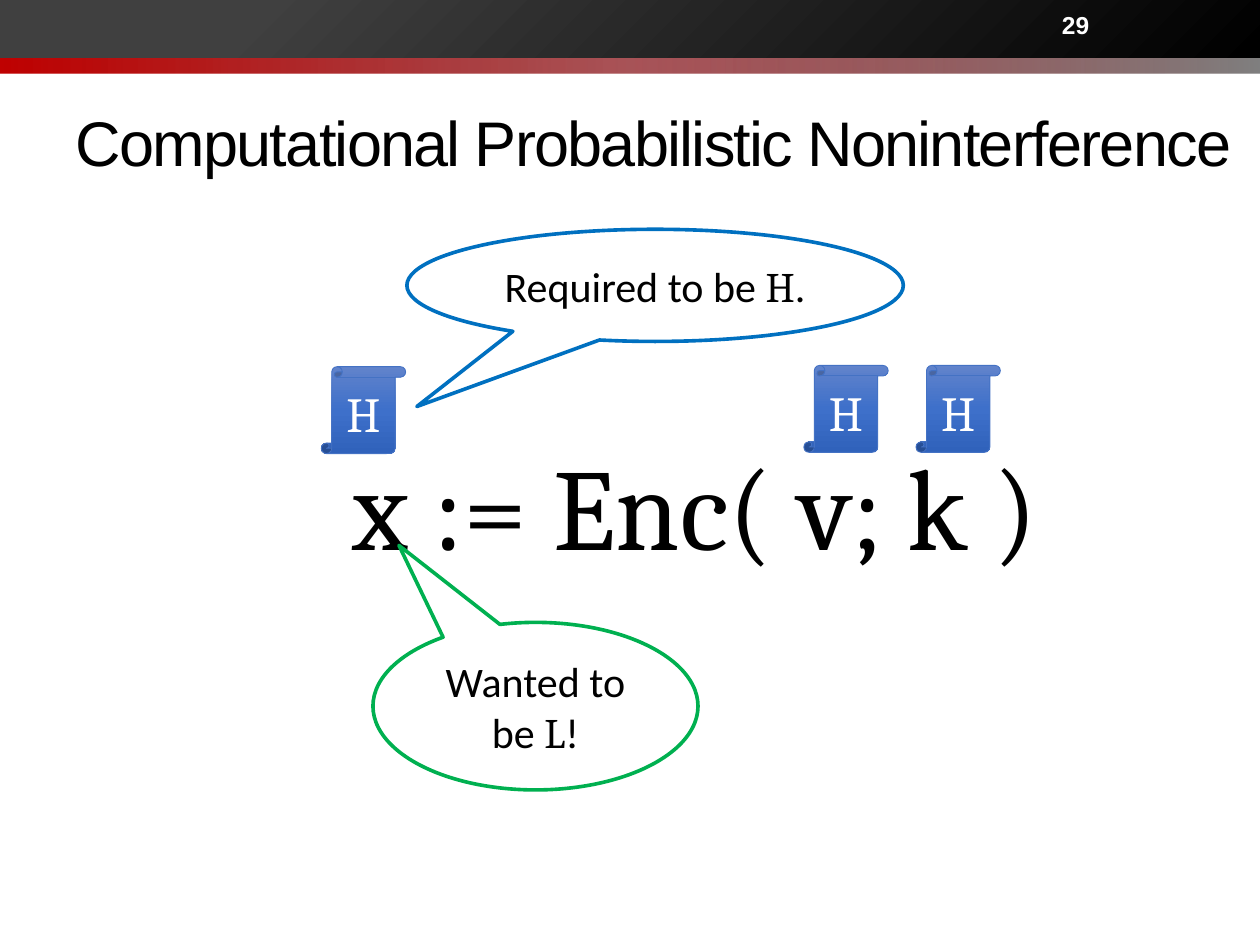
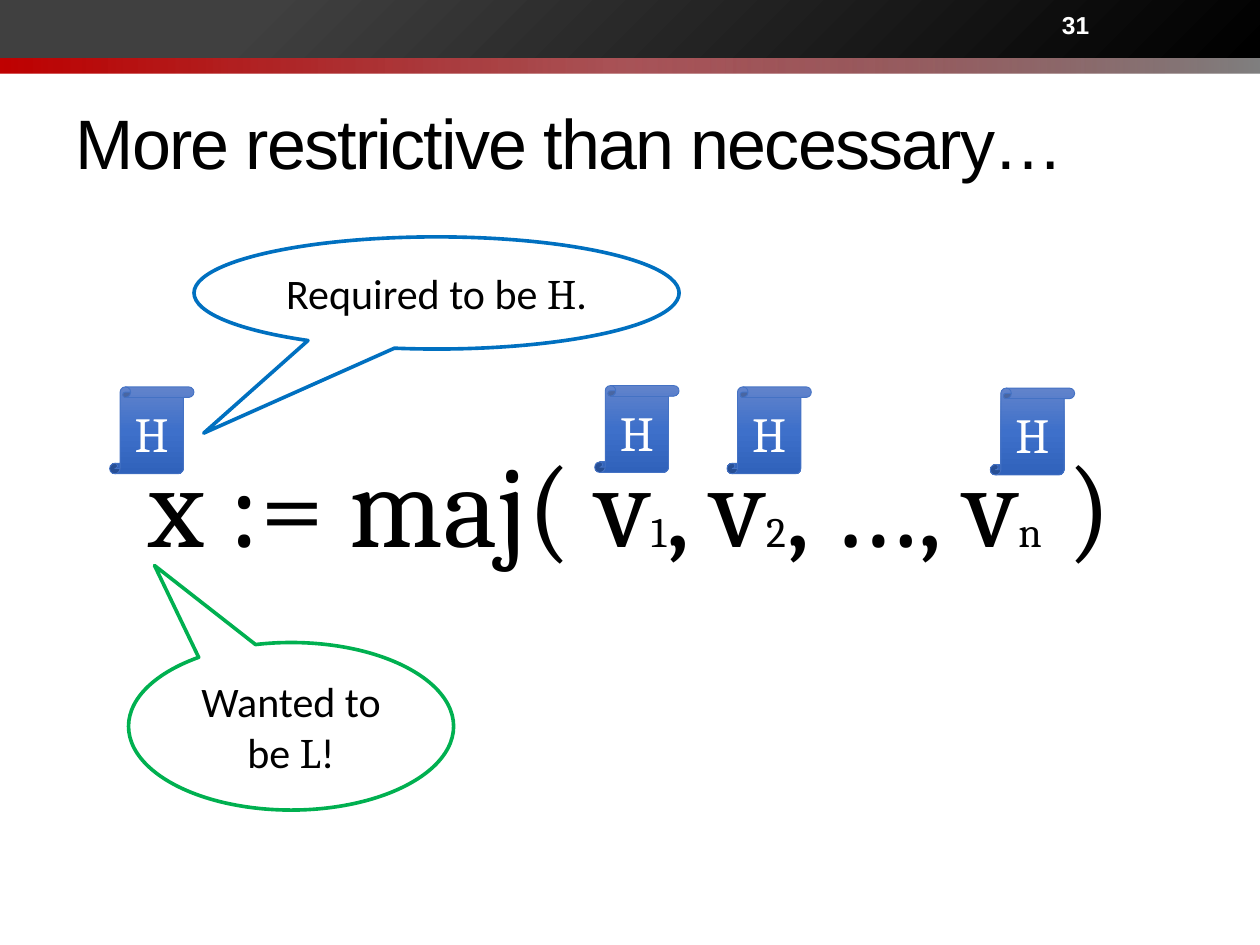
from lxml import etree
from pptx import Presentation
from pptx import util as u
from pptx.dml.color import RGBColor
from pptx.enum import shapes, text
from pptx.oxml.ns import qn

WIDTH, HEIGHT = u.Inches(10), u.Inches(7.5)
COLUMNS, ROWS = 100, 75
BLACK, WHITE, BLUE, GREEN = "000000", "FFFFFF", "0070C0", "00B050"
SCROLL_EDGE = "4472C4"
# Gradient stops: position, colour, opacity (all in percent)
RED_FADE = [(0, "C00000", 100), (50, "7F0007", 67), (100, "808080", 100)]
BLACK_FADE = [(0, "000000", 100), (80, "404040", 100), (100, "404040", 100)]
SCROLL_FADE = [(0, "6183CB", 100), (50, "3E70CA", 100), (100, "3062BB", 100)]
HEADING, PROSE, MATH = "Arial", "Calibri", "Cambria"
SHAPE = shapes.MSO_SHAPE
LEFT, CENTER = text.PP_ALIGN.LEFT, text.PP_ALIGN.CENTER


def rgb(hex_color):
    return RGBColor.from_string(hex_color)


def grid(left, top, width, height):
    """Turn columns and rows into slide lengths."""
    return (int(left * WIDTH / COLUMNS), int(top * HEIGHT / ROWS),
            int(width * WIDTH / COLUMNS), int(height * HEIGHT / ROWS))


def write(frame, runs, size, color=BLACK, align=CENTER, bold=False):
    """Fill a frame with one paragraph; each run is (words, font, size or None)."""
    frame.word_wrap = True
    paragraph = frame.paragraphs[0]
    paragraph.alignment = align
    paragraph.font.size = u.Pt(size)
    paragraph.font.bold = bold
    paragraph.font.color.rgb = rgb(color)
    fonts = {font for _, font, _ in runs}
    if len(fonts) == 1:
        paragraph.font.name = runs[0][1]
    for words, font, run_size in runs:
        run = paragraph.add_run()
        run.text = words
        if len(fonts) > 1:
            run.font.name = font
        if run_size:
            run.font.size = u.Pt(run_size)
    return paragraph


def gradient(shape, stops, angle):
    fill = etree.Element(qn("a:gradFill"), rotWithShape="1")
    stop_list = etree.SubElement(fill, qn("a:gsLst"))
    for position, color, opacity in stops:
        stop = etree.SubElement(stop_list, qn("a:gs"), pos=str(position * 1000))
        tint = etree.SubElement(stop, qn("a:srgbClr"), val=color)
        if opacity < 100:
            etree.SubElement(tint, qn("a:alpha"), val=str(opacity * 1000))
    etree.SubElement(fill, qn("a:lin"), ang=str(angle * 60000), scaled="0")
    shape._element.spPr.find(qn("a:prstGeom")).addnext(fill)


def add_preset(slide, preset, place, edge=None, weight=0):
    shape = slide.shapes.add_shape(preset, *grid(*place))
    shape.shadow.inherit = False
    if edge:
        shape.line.color.rgb = rgb(edge)
        shape.line.width = u.Pt(weight)
    else:
        shape.line.fill.background()
    return shape


def add_bands(slide):
    """Draw the two header bands and hand them to the shared layout."""
    tree = slide.slide_layout.shapes._spTree
    bands = [((0, 2.4, COLUMNS, 3.4), RED_FADE, 0),
             ((0, 0, COLUMNS, 4.6), BLACK_FADE, 225)]
    for depth, (place, stops, angle) in enumerate(bands):
        band = add_preset(slide, SHAPE.RECTANGLE, place)
        gradient(band, stops, angle)
        tree.insert(2 + depth, band._element)


def add_heading(slide, words, size, columns):
    title = slide.shapes.title
    title.left, title.top, title.width, title.height = grid(5, 5.8, columns, 10.8)
    title.text_frame.auto_size = text.MSO_AUTO_SIZE.NONE
    title.text_frame.vertical_anchor = text.MSO_ANCHOR.MIDDLE
    line = write(title.text_frame, [(words, HEADING, None)], size, align=LEFT)
    line.runs[0]._r.get_or_add_rPr().set("spc", "-100")


def add_number(slide, number):
    frame = slide.shapes.add_textbox(*grid(83.3, 0.2, 11.7, 3.6)).text_frame
    frame.vertical_anchor = text.MSO_ANCHOR.MIDDLE
    write(frame, [(number, HEADING, None)], 14, WHITE, LEFT, bold=True)


def add_formula(slide, place, *parts):
    """Parts alternate between full-size text and small indices."""
    frame = slide.shapes.add_textbox(*grid(*place)).text_frame
    write(frame, [(part, MATH, 24 if i % 2 else 66) for i, part in enumerate(parts)], 66)


def add_callout(slide, place, tail, edge, words, level, ending, filled):
    callout = add_preset(slide, SHAPE.OVAL_CALLOUT, place, edge, 2.08)
    callout.adjustments[0], callout.adjustments[1] = tail
    if filled:
        callout.fill.solid()
        callout.fill.fore_color.rgb = rgb(WHITE)
    else:
        callout.fill.background()
    write(callout.text_frame,
          [(words, PROSE, None), (level, MATH, None), (ending, PROSE, None)], 24)


def add_required(slide, place, tail, filled=False):
    add_callout(slide, place, tail, BLUE, "Required to be ", "H", ".", filled)


def add_wanted(slide, left, top, filled=False):
    add_callout(slide, (left, top, 25.8, 13.3), (-0.42, -0.96), GREEN,
                "Wanted to be ", "L", "!", filled)


def add_labels(slide, corners):
    for left, top in corners:
        scroll = add_preset(slide, SHAPE.VERTICAL_SCROLL, (left, top, 6.7, 6.9),
                            SCROLL_EDGE, 0.5)
        gradient(scroll, SCROLL_FADE, 90)
        write(scroll.text_frame, [("H", MATH, None)], 28, WHITE)


def main():
    deck = Presentation()
    deck.slide_width, deck.slide_height = WIDTH, HEIGHT
    title_only = deck.slide_layouts[5]

    # Encryption example
    encryption = deck.slides.add_slide(title_only)
    add_bands(encryption)
    add_heading(encryption, "Computational Probabilistic Noninterference", 36, 95)
    add_number(encryption, "29")
    add_formula(encryption, (15.3, 34, 79.7, 12.1), "x := Enc( v; k )")
    add_wanted(encryption, 29.6, 49.4, filled=True)
    add_required(encryption, (32.3, 18.2, 39.4, 8.9), (-0.48, 1.08), filled=True)
    add_labels(encryption, [(25.5, 29.1), (63.8, 29), (72.7, 29)])

    # Majority example
    majority = deck.slides.add_slide(title_only)
    add_heading(majority, "More restrictive than necessary…", 40, 90)
    add_number(majority, "31")
    add_formula(majority, (7.1, 33.8, 85.8, 12.1),
                "x := maj( v", "1", ", v", "2", ", …, v", "n", " )")
    add_wanted(majority, 10.2, 51)
    add_required(majority, (15.4, 18.8, 38.5, 8.9), (-0.48, 1.25))
    add_labels(majority, [(8.7, 30.7), (47.2, 30.6), (57.7, 30.7), (78.6, 30.8)])

    deck.save("out.pptx")


if __name__ == "__main__":
    main()
